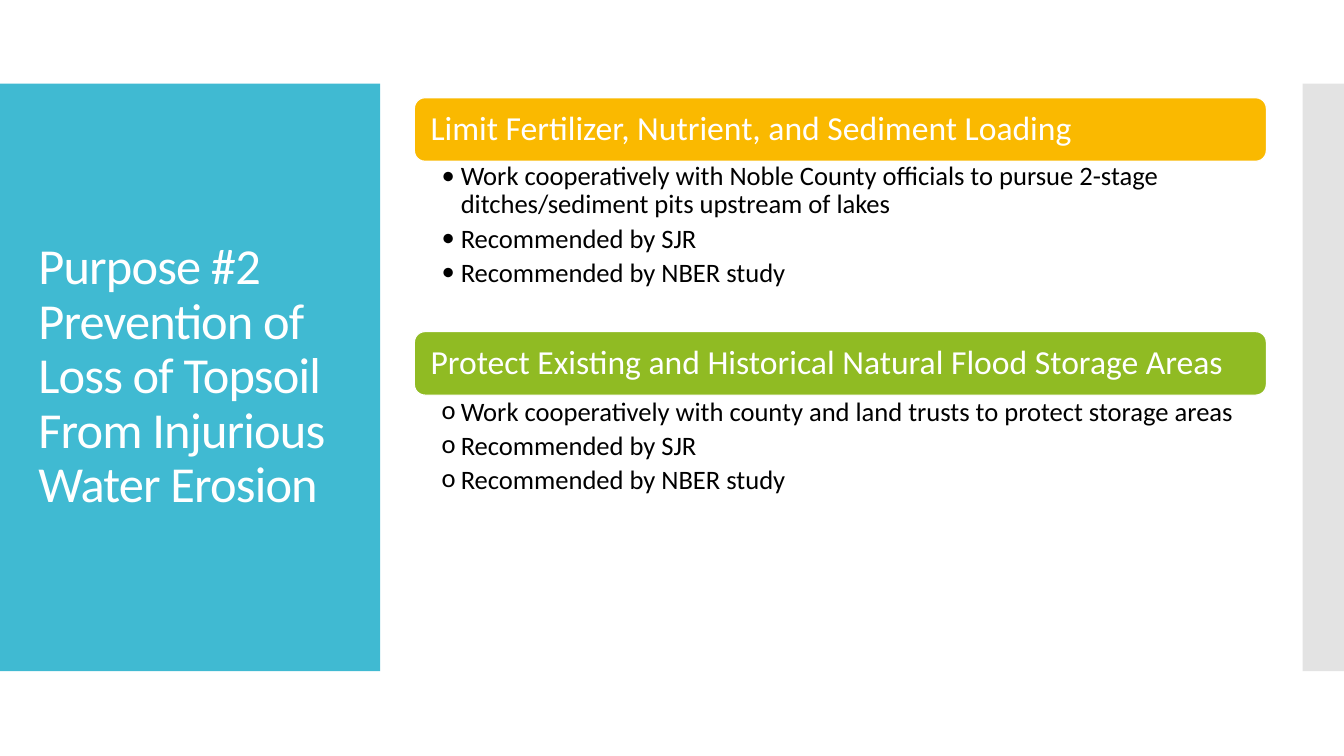
from dataclasses import dataclass

import pptx
import pptx.dml.color
import pptx.enum.shapes
import pptx.enum.text
import pptx.oxml.ns
import pptx.util
from lxml import etree

Inches = pptx.util.Inches
Pt = pptx.util.Pt
ANCHOR = pptx.enum.text.MSO_ANCHOR
SHAPE = pptx.enum.shapes.MSO_SHAPE
qn = pptx.oxml.ns.qn


@dataclass(frozen=True)
class Theme:
    font: str = "Calibri"
    white: str = "FFFFFF"
    text: str = "000000"
    panel: str = "40BAD2"
    strip: str = "C8C8C8"
    title_size: int = 36
    heading_size: int = 24
    bullet_size: int = 19


THEME = Theme()
GOALS_LEFT, GOALS_WIDTH, HEADING_HEIGHT = 4.11, 8.45, 0.63

# heading, fill, heading top, list top, list height, bullet, items
GOALS = [
    ("Limit Fertilizer, Nutrient, and Sediment Loading", "FAB900", 0.97, 1.58, 1.71, "•",
     ["Work cooperatively with Noble County officials to pursue 2-stage "
      "ditches/sediment pits upstream of lakes",
      "Recommended by SJR", "Recommended by NBER study"]),
    ("Protect Existing and Historical Natural Flood Storage Areas", "90BB23", 3.29, 3.92, 1.93, "o",
     ["Work cooperatively with county and land trusts to protect storage areas",
      "Recommended by SJR", "Recommended by NBER study"]),
]


def rgb(value):
    return pptx.dml.color.RGBColor.from_string(value)


def set_frame(tf, anchor, left=0.1, top=0.05, right=0.1, bottom=0.05):
    values = {
        "word_wrap": True,
        "auto_size": pptx.enum.text.MSO_AUTO_SIZE.NONE,
        "vertical_anchor": anchor,
        "margin_left": Inches(left),
        "margin_top": Inches(top),
        "margin_right": Inches(right),
        "margin_bottom": Inches(bottom),
    }
    for name, value in values.items():
        setattr(tf, name, value)


def write(p, text, size, color, space_after=0):
    """Fill a left-aligned paragraph with one run and return the run."""
    layout = {
        "alignment": pptx.enum.text.PP_ALIGN.LEFT,
        "line_spacing": 0.9,
        "space_before": Pt(0),
        "space_after": Pt(space_after),
    }
    for name, value in layout.items():
        setattr(p, name, value)
    r = p.add_run()
    r.text = text
    for name, value in {"name": THEME.font, "size": Pt(size)}.items():
        setattr(r.font, name, value)
    r.font.color.rgb = rgb(color)
    return r


def add_block(s, kind, left, top, width, height, fill):
    sp = s.shapes.add_shape(kind, Inches(left), Inches(top), Inches(width), Inches(height))
    sp.shadow.inherit = False
    sp.fill.solid()
    sp.fill.fore_color.rgb = rgb(fill)
    sp.line.fill.background()
    return sp


def add_side_panels(s):
    add_block(s, SHAPE.RECTANGLE, 0, 0.83, 3.77, 5.83, THEME.panel)
    strip = add_block(s, SHAPE.RECTANGLE, 12.92, 0.83, 0.42, 5.83, THEME.strip)
    color = strip.element.spPr.find(qn("a:solidFill"))[0]
    etree.SubElement(color, qn("a:alpha"), val="50000")


def set_title(s, text):
    """Place the title and bring it in front of its panel."""
    title = s.shapes.title
    box = {"left": 0.28, "top": 1.23, "width": 3.22, "height": 5.03}
    for name, value in box.items():
        setattr(title, name, Inches(value))
    set_frame(title.text_frame, ANCHOR.MIDDLE)
    r = write(title.text_frame.paragraphs[0], text, THEME.title_size, THEME.white)
    r.font._element.set("spc", "-60")
    title.element.getparent().append(title.element)


def add_heading(s, text, fill, top):
    sp = add_block(s, SHAPE.ROUNDED_RECTANGLE, GOALS_LEFT, top, GOALS_WIDTH, HEADING_HEIGHT, fill)
    sp.line.color.rgb = rgb(THEME.white)
    sp.line.width = Pt(0.85)
    set_frame(sp.text_frame, ANCHOR.MIDDLE, left=0.13, right=0.13)
    write(sp.text_frame.paragraphs[0], text, THEME.heading_size, THEME.white)


def add_bullet(p, char):
    pPr = p._p.get_or_add_pPr()
    pPr.set("marL", str(Inches(0.19)))
    pPr.set("indent", str(-Inches(0.19)))
    etree.SubElement(pPr, qn("a:buFont"), typeface=THEME.font)
    etree.SubElement(pPr, qn("a:buChar"), char=char)


def add_bullet_list(s, items, char, top, height):
    sp = s.shapes.add_textbox(Inches(GOALS_LEFT), Inches(top), Inches(GOALS_WIDTH), Inches(height))
    tf = sp.text_frame
    set_frame(tf, ANCHOR.TOP, left=0.27, top=0.03, right=0.19, bottom=0.03)
    for i, item in enumerate(items):
        p = tf.add_paragraph() if i else tf.paragraphs[0]
        p.level = 1
        add_bullet(p, char)
        write(p, item, THEME.bullet_size, THEME.text, space_after=3.8)


def main():
    prs = pptx.Presentation()
    prs.slide_width, prs.slide_height = Inches(13.33), Inches(7.5)
    s = prs.slides.add_slide(prs.slide_layouts[5])
    add_side_panels(s)
    set_title(s, "Purpose #2 Prevention of Loss of Topsoil From Injurious Water Erosion")
    for heading, fill, heading_top, list_top, list_height, char, items in GOALS:
        add_heading(s, heading, fill, heading_top)
        add_bullet_list(s, items, char, list_top, list_height)
    prs.save("out.pptx")


if __name__ == "__main__":
    main()
